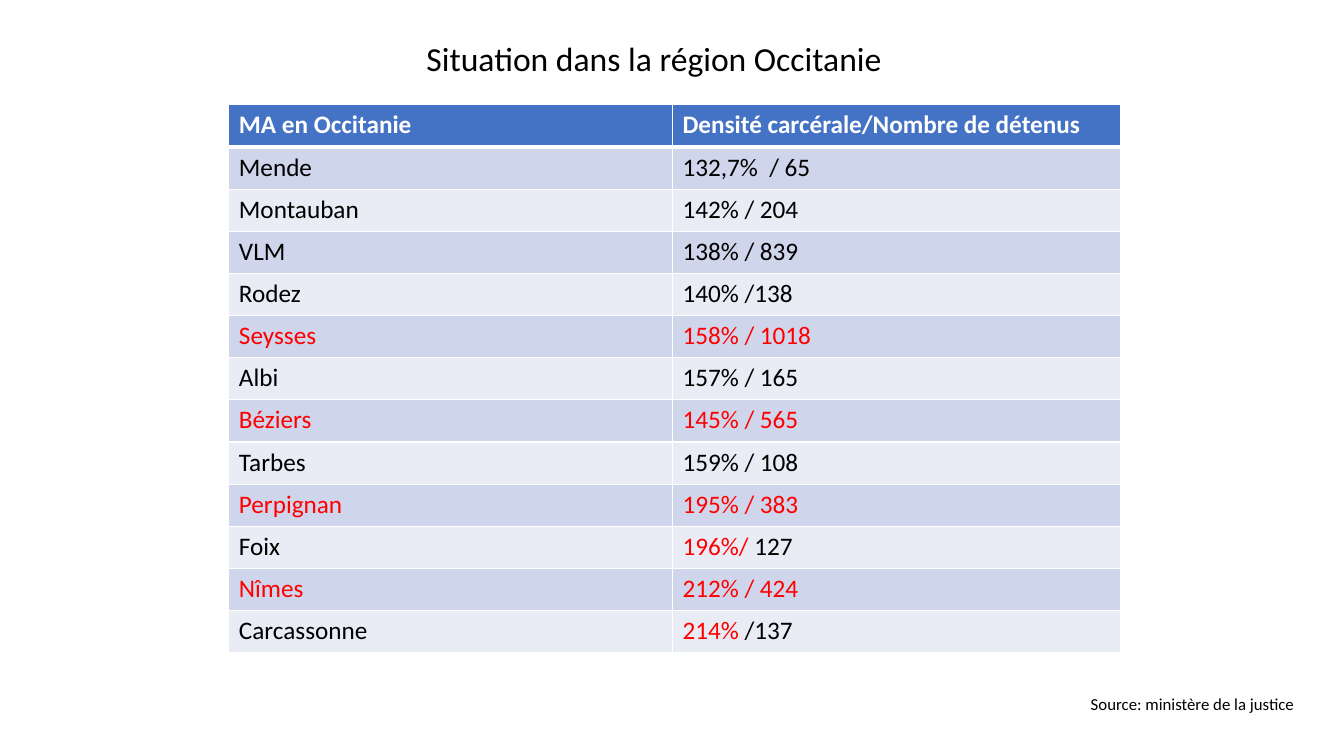
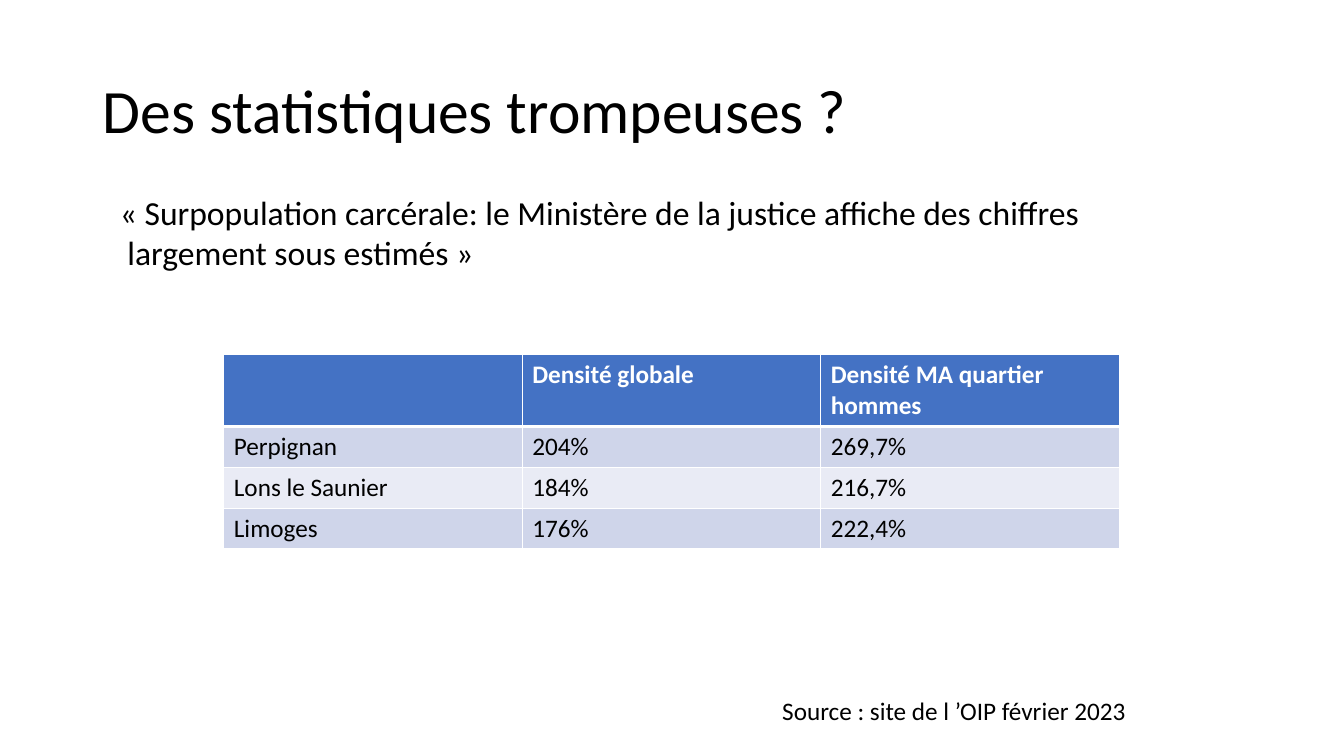
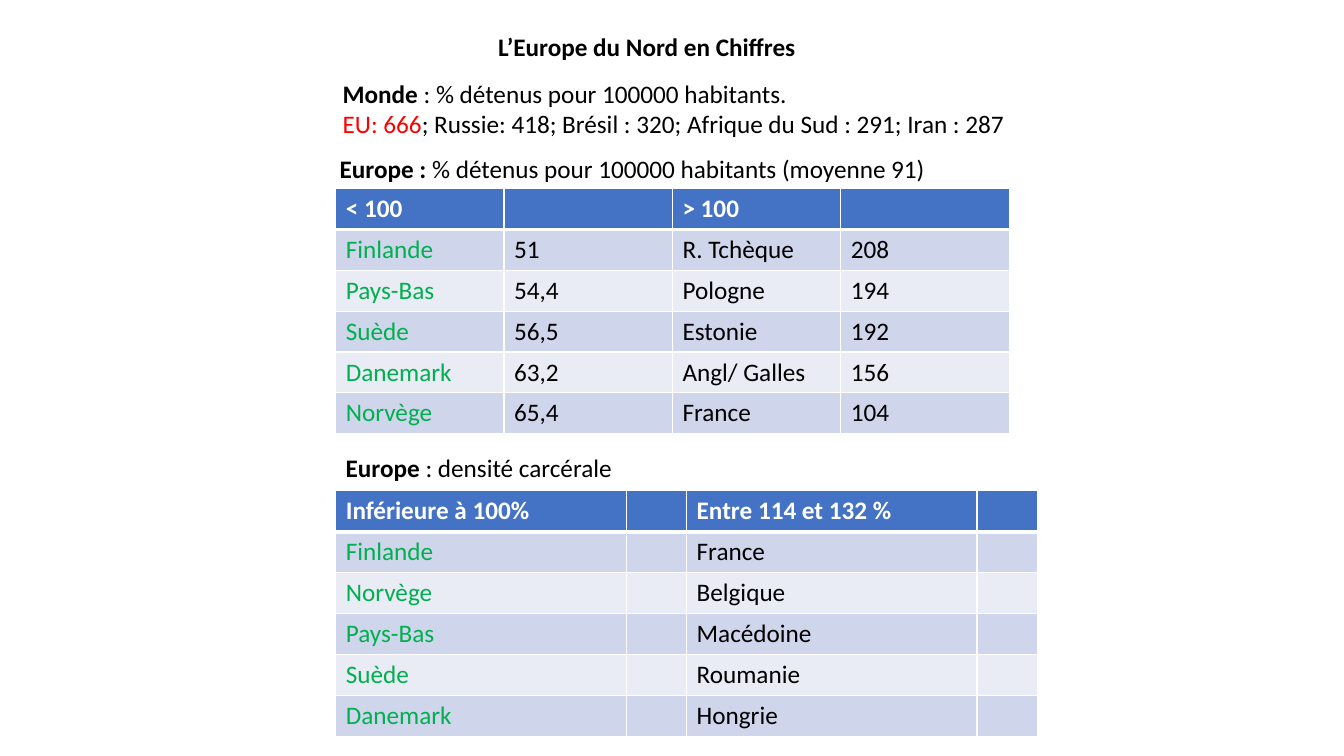
from dataclasses import dataclass
from typing import NamedTuple

from lxml import etree
from pptx import Presentation
from pptx.dml.color import RGBColor
from pptx.enum.text import MSO_ANCHOR, MSO_AUTO_SIZE, PP_ALIGN
from pptx.oxml.ns import qn
from pptx.slide import Slide
from pptx.table import _Cell
from pptx.text.text import TextFrame, _Paragraph
from pptx.util import Inches, Pt

LEFT = PP_ALIGN.LEFT
MIDDLE = MSO_ANCHOR.MIDDLE
TOP = MSO_ANCHOR.TOP
FIT = MSO_AUTO_SIZE.SHAPE_TO_FIT_TEXT
FIXED = MSO_AUTO_SIZE.NONE

BLACK = RGBColor(0x00, 0x00, 0x00)
WHITE = RGBColor(0xFF, 0xFF, 0xFF)
RED = RGBColor(0xFF, 0x00, 0x00)
GREEN = RGBColor(0x00, 0xB0, 0x50)
BLUE = RGBColor(0x44, 0x72, 0xC4)
BANDS = (RGBColor(0xE9, 0xEB, 0xF5), RGBColor(0xCF, 0xD5, 0xEA))

FONT = "Calibri"
THIN = Pt(1)
THICK = Pt(3)
TITLE_ONLY = 5


class Run(NamedTuple):
    text: str
    hue: RGBColor = BLACK
    bold: bool = False


class Box(NamedTuple):
    left: float
    top: float
    width: float
    height: float


Line = tuple[Run, ...]


@dataclass
class Title:
    box: Box
    run: Run
    size: int
    space: float = 1.0
    wrap: bool = False


@dataclass
class Note:
    box: Box
    lines: list[Line]
    size: int = 18


@dataclass
class Grid:
    box: Box
    cols: list[float]
    heads: list[str]
    rows: list[list[Line]]


@dataclass
class Page:
    title: Title
    notes: list[Note]
    grids: list[Grid]


def plain(*words: str) -> list[Line]:
    return [(Run(word),) for word in words]


def tint(hue: RGBColor, *words: str) -> list[Line]:
    return [(Run(word, hue),) for word in words]


def add_runs(para: _Paragraph, line: Line, size: int) -> None:
    para.alignment = LEFT
    for part in line:
        if not part.text:
            continue
        run = para.add_run()
        run.text = part.text
        run.font.name = FONT
        run.font.size = Pt(size)
        run.font.bold = part.bold
        run.font.color.rgb = part.hue


def add_lines(frame: TextFrame, lines: list[Line], size: int) -> None:
    for index, line in enumerate(lines):
        para = frame.add_paragraph() if index else frame.paragraphs[0]
        add_runs(para, line, size)


def set_title(slide: Slide, title: Title) -> None:
    shape = slide.shapes.title
    shape.left, shape.top, shape.width, shape.height = map(Inches, title.box)
    frame = shape.text_frame
    frame.word_wrap = title.wrap
    frame.auto_size = FIXED
    frame.vertical_anchor = MIDDLE
    add_lines(frame, [(title.run,)], title.size)
    frame.paragraphs[0].line_spacing = title.space


def add_note(slide: Slide, note: Note) -> None:
    frame = slide.shapes.add_textbox(*map(Inches, note.box)).text_frame
    frame.word_wrap = False
    frame.auto_size = FIT
    frame.vertical_anchor = TOP
    add_lines(frame, note.lines, note.size)


def set_edges(cell: _Cell, row: int) -> None:
    props = cell._tc.get_or_add_tcPr()
    edges = {
        "a:lnL": THIN,
        "a:lnR": THIN,
        "a:lnT": THICK if row == 1 else THIN,
        "a:lnB": THICK if row == 0 else THIN,
    }
    for tag, width in edges.items():
        edge = etree.SubElement(props, qn(tag), w=str(width))
        fill = etree.SubElement(edge, qn("a:solidFill"))
        etree.SubElement(fill, qn("a:srgbClr"), val=str(WHITE))


def add_grid(slide: Slide, grid: Grid) -> None:
    heads = [(Run(head, WHITE, True),) for head in grid.heads]
    rows = [heads, *grid.rows]
    table = slide.shapes.add_table(
        len(rows), len(grid.cols), *map(Inches, grid.box)
    ).table
    for col, width in zip(table.columns, grid.cols):
        col.width = Inches(width)
    for index, row in enumerate(rows):
        for col, line in enumerate(row):
            cell = table.cell(index, col)
            set_edges(cell, index)
            cell.fill.solid()
            cell.fill.fore_color.rgb = BANDS[index % 2] if index else BLUE
            add_runs(cell.text_frame.paragraphs[0], line, 18)


REGION = Page(
    Title(Box(4.13, 0.33, 4.76, 0.5), Run("Situation dans la région Occitanie"), 24),
    [Note(Box(10.72, 6.83, 2.24, 0.3), plain("Source: ministère de la justice"), 12)],
    [
        Grid(
            Box(2.27, 1.04, 8.84, 5.44),
            [4.4, 4.44],
            ["MA en Occitanie", "Densité carcérale/Nombre de détenus"],
            [
                plain("Mende", "132,7%  / 65"),
                plain("Montauban", "142% / 204"),
                plain("VLM", "138% / 839"),
                plain("Rodez", "140% /138"),
                tint(RED, "Seysses", "158% / 1018"),
                plain("Albi", "157% / 165"),
                tint(RED, "Béziers", "145% / 565"),
                plain("Tarbes", "159% / 108"),
                tint(RED, "Perpignan", "195% / 383"),
                [(Run("Foix"),), (Run("196%/ ", RED), Run("127"))],
                tint(RED, "Nîmes", "212% / 424"),
                [(Run("Carcassonne"),), (Run("214% ", RED), Run("/137"))],
            ],
        )
    ],
)

STATS = Page(
    Title(
        Box(0.92, 0.4, 11.5, 1.45),
        Run("Des statistiques trompeuses ?"),
        44,
        space=0.9,
        wrap=True,
    ),
    [
        Note(Box(7.66, 6.85, 3.78, 0.4), plain("Source : site de l ’OIP février 2023")),
        Note(
            Box(1.09, 1.85, 9.83, 0.91),
            plain(
                "« Surpopulation carcérale: le Ministère de la justice affiche des chiffres",
                " largement sous estimés »",
            ),
            24,
        ),
    ],
    [
        Grid(
            Box(2.22, 3.52, 8.88, 1.62),
            [2.96] * 3,
            ["", "Densité globale", "Densité MA quartier hommes"],
            [
                plain("Perpignan", "204%", "269,7%"),
                plain("Lons le Saunier", "184%", "216,7%"),
                plain("Limoges", "176%", "222,4%"),
            ],
        )
    ],
)

RATES = [
    ("Finlande", "51", "R. Tchèque", "208"),
    ("Pays-Bas", "54,4", "Pologne", "194"),
    ("Suède", "56,5", "Estonie", "192"),
    ("Danemark", "63,2", "Angl/ Galles", "156"),
    ("Norvège", "65,4", "France", "104"),
]

LOADS = [
    ("Finlande", "", "France", ""),
    ("Norvège", "", "Belgique", ""),
    ("Pays-Bas", "", "Macédoine", ""),
    ("Suède", "", "Roumanie", ""),
    ("Danemark", "", "Hongrie", ""),
]


def green_first(rows: list[tuple[str, ...]]) -> list[list[Line]]:
    return [tint(GREEN, first) + plain(*rest) for first, *rest in rows]


EUROPE = Page(
    Title(
        Box(4.84, 0.26, 3.18, 0.4),
        Run("L’Europe du Nord en Chiffres", bold=True),
        18,
    ),
    [
        Note(
            Box(3.3, 0.73, 6.83, 0.71),
            [
                (Run("Monde", bold=True), Run(" : % détenus pour 100000 habitants.")),
                (
                    Run("EU: 666", RED),
                    Run("; Russie: 418; Brésil : 320; Afrique du Sud : 291; Iran : 287"),
                ),
            ],
        ),
        Note(
            Box(3.27, 1.47, 6.06, 0.4),
            [
                (
                    Run("Europe : ", bold=True),
                    Run("% détenus pour 100000 habitants (moyenne 91)"),
                )
            ],
        ),
        Note(
            Box(3.33, 4.44, 2.93, 0.4),
            [(Run("Europe", bold=True), Run(" : densité carcérale"))],
        ),
    ],
    [
        Grid(
            Box(3.33, 1.87, 6.68, 2.43),
            [1.67] * 4,
            ["< 100", "", "> 100", ""],
            green_first(RATES),
        ),
        Grid(
            Box(3.33, 4.87, 6.96, 2.43),
            [2.88, 0.6] * 2,
            ["Inférieure à 100%", "", "Entre 114 et 132 %", ""],
            green_first(LOADS),
        ),
    ],
)


def main() -> None:
    deck = Presentation()
    deck.slide_width = Inches(13.33)
    deck.slide_height = Inches(7.5)
    for page in (REGION, STATS, EUROPE):
        slide = deck.slides.add_slide(deck.slide_layouts[TITLE_ONLY])
        set_title(slide, page.title)
        for grid in page.grids:
            add_grid(slide, grid)
        for note in page.notes:
            add_note(slide, note)
    deck.save("out.pptx")


if __name__ == "__main__":
    main()
